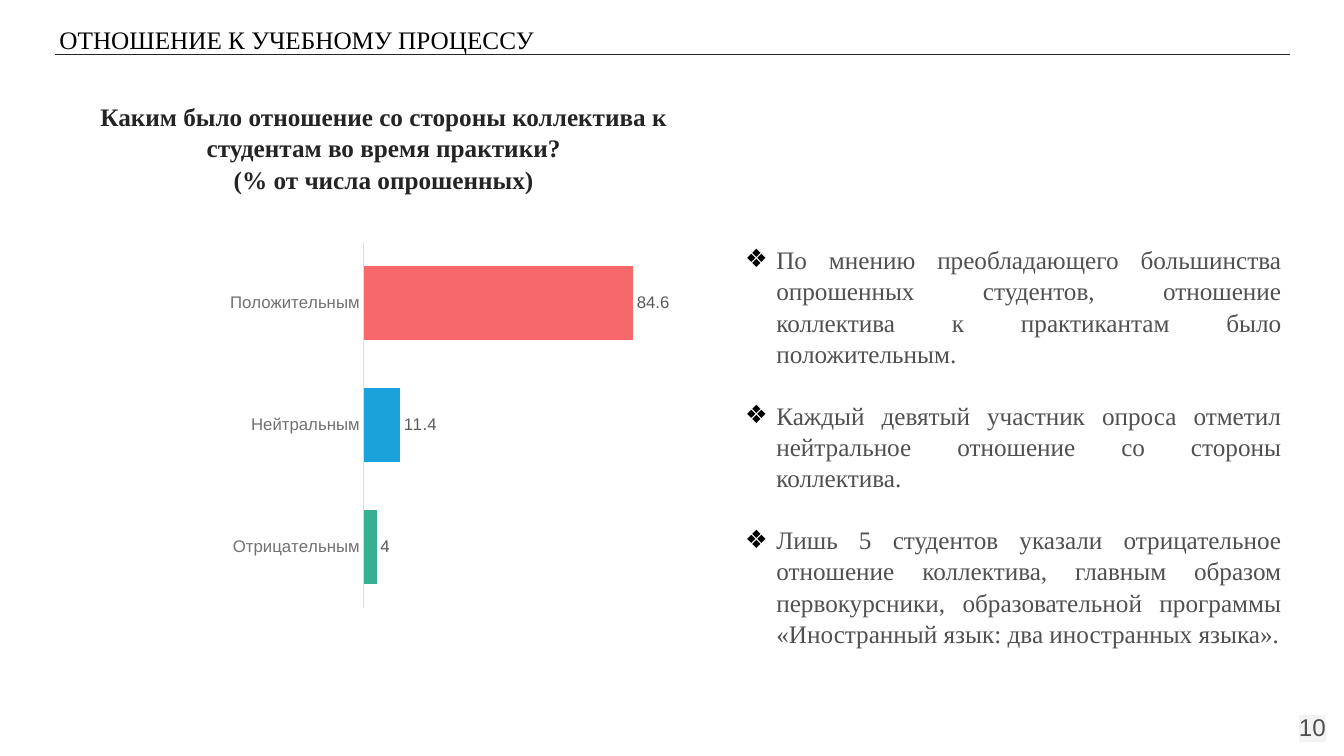
"""Build the survey slide about the staff's attitude to students."""
import pptx
import pptx.util
import pptx.chart.data
import pptx.dml.color
import pptx.enum.chart
import pptx.enum.shapes
import pptx.enum.text
import pptx.oxml
import pptx.oxml.ns
from pptx.util import Inches

COLORS = {
    "ink": "242424", "black": "000000", "body": "505050", "highlight": "F3F3F3",
    "category": "717171", "label": "5B5B5B", "axis": "DEDEDE",
    "negative": "36AF92", "neutral": "19A3DA", "positive": "F7686B", "series": "62CFB5",
}
ANSWERS = [
    ("Отрицательным", 4, "negative"),
    ("Нейтральным", 11.4, "neutral"),
    ("Положительным", 84.6, "positive"),
]
FINDINGS = [
    "По мнению преобладающего большинства опрошенных студентов, отношение коллектива "
    "к практикантам было положительным.",
    "Каждый девятый участник опроса отметил нейтральное отношение со стороны коллектива.",
    "Лишь 5 студентов указали отрицательное отношение коллектива, главным образом "
    "первокурсники, образовательной программы «Иностранный язык: два иностранных языка».",
]
ALIGN = pptx.enum.text.PP_ALIGN
ANCHOR = pptx.enum.text.MSO_ANCHOR


def style_font(font, size, color, name="Times New Roman", bold=False):
    font.size = pptx.util.Pt(size)
    font.name = name
    font.bold = bold
    font.color.rgb = pptx.dml.color.RGBColor.from_string(COLORS[color])


def fill_box(box, place, texts, inset, align, anchor, **style):
    box.left, box.top, box.width, box.height = [Inches(length) for length in place]
    frame = box.text_frame
    frame.text = "\n".join(texts)
    frame.word_wrap = True
    frame.auto_size = pptx.enum.text.MSO_AUTO_SIZE.NONE
    frame.vertical_anchor = anchor
    frame.margin_left = frame.margin_right = Inches(inset)
    frame.margin_top = frame.margin_bottom = Inches(inset)
    for para in frame.paragraphs:
        para.alignment = align
        para.space_before = pptx.util.Pt(0)
        for span in para.runs:
            style_font(span.font, **style)
    return frame


deck = pptx.Presentation()
deck.slide_width, deck.slide_height = Inches(13.33), Inches(7.5)
page = deck.slides.add_slide(deck.slide_layouts[1])
title, body = page.placeholders

rule = page.shapes.add_connector(
    pptx.enum.shapes.MSO_CONNECTOR.STRAIGHT,
    Inches(0.55), Inches(0.54), Inches(12.79), Inches(0.54))
rule.line.color.rgb = pptx.dml.color.RGBColor.from_string(COLORS["ink"])
rule.line.width = pptx.util.Pt(0.75)
rule.element.spPr.append(pptx.oxml.parse_xml(
    f'<a:effectLst {pptx.oxml.ns.nsdecls("a")}/>'))

question = ("Каким было отношение со стороны коллектива к студентам во время практики?"
            "\v(% от числа опрошенных)")
heading = fill_box(title, (0.58, 0.89, 6.45, 1.04), [question], 0.1, ALIGN.CENTER,
                   ANCHOR.TOP, size=18, color="ink", bold=True)
heading.paragraphs[0].line_spacing = 1.04

findings = fill_box(body, (7.26, 2.28, 5.58, 4.17), FINDINGS, 0.13, ALIGN.JUSTIFY,
                    ANCHOR.TOP, size=18, color="body")
for index, para in enumerate(findings.paragraphs):
    para.line_spacing = 1.04
    para.space_before = pptx.util.Pt(21.5 if index else 0)
    properties = para._p.get_or_add_pPr()
    properties.set("marL", str(Inches(0.31)))
    properties.set("indent", str(-Inches(0.31)))
    for markup in (f'<a:buClr {{}}><a:srgbClr val="{COLORS["black"]}"/></a:buClr>',
                   '<a:buChar {} char="❖"/>'):
        properties.append(pptx.oxml.parse_xml(
            markup.format(pptx.oxml.ns.nsdecls("a"))))

section = page.shapes.add_textbox(0, 0, 0, 0)
fill_box(section, (0.54, 0.19, 9.46, 0.4), ["ОТНОШЕНИЕ К УЧЕБНОМУ ПРОЦЕССУ"], 0.05,
         ALIGN.LEFT, ANCHOR.TOP, size=18, color="black")

number = page.shapes.add_textbox(0, 0, 0, 0)
number_frame = fill_box(number, (12.48, 6.93, 0.8, 0.57), ["10"], 0.13, ALIGN.RIGHT,
                        ANCHOR.MIDDLE, size=17.3, color="body", name="Arial")
number_fill = number_frame.paragraphs[0].runs[0]._r.rPr.find(
    pptx.oxml.ns.qn("a:solidFill"))
number_fill.addnext(pptx.oxml.parse_xml(
    f'<a:highlight {pptx.oxml.ns.nsdecls("a")}>'
    f'<a:srgbClr val="{COLORS["highlight"]}"/></a:highlight>'))

data = pptx.chart.data.CategoryChartData()
data.categories = [answer for answer, share, color in ANSWERS]
data.add_series("Series 1", [share for answer, share, color in ANSWERS])
chart = page.shapes.add_chart(
    pptx.enum.chart.XL_CHART_TYPE.BAR_CLUSTERED,
    Inches(0.58), Inches(2.07), Inches(6.31), Inches(4.17), data).chart
chart.has_legend = False
chart.has_title = False
style_font(chart.font, 10, "ink", "Arial")

categories = chart.category_axis
categories.major_tick_mark = pptx.enum.chart.XL_TICK_MARK.NONE
categories.format.line.color.rgb = pptx.dml.color.RGBColor.from_string(COLORS["axis"])
categories.format.line.width = pptx.util.Pt(0.75)
style_font(categories.tick_labels.font, 12, "category", "Arial")
values = chart.value_axis
values.visible = False
values.has_major_gridlines = False
values.minimum_scale, values.maximum_scale = 0, 90

plot = chart.plots[0]
plot.gap_width = 66
plot.vary_by_categories = False
series = plot.series[0]
series.format.fill.solid()
series.format.fill.fore_color.rgb = pptx.dml.color.RGBColor.from_string(COLORS["series"])
for index, (answer, share, color) in enumerate(ANSWERS):
    fill = series.points[index].format.fill
    fill.solid()
    fill.fore_color.rgb = pptx.dml.color.RGBColor.from_string(COLORS[color])
labels = series.data_labels
labels.show_value = True
labels.position = pptx.enum.chart.XL_LABEL_POSITION.OUTSIDE_END
style_font(labels.font, 12, "label", "Arial")

area = chart._chartSpace.chart.plotArea
for old_layout in area.findall(pptx.oxml.ns.qn("c:layout")):
    area.remove(old_layout)
area.insert(0, pptx.oxml.parse_xml(
    f'<c:layout {pptx.oxml.ns.nsdecls("c")}><c:manualLayout>'
    '<c:layoutTarget val="inner"/><c:xMode val="edge"/><c:yMode val="edge"/>'
    '<c:x val="0.48"/><c:y val="0.08"/><c:w val="0.45"/><c:h val="0.87"/>'
    '</c:manualLayout></c:layout>'))

deck.save("out.pptx")
